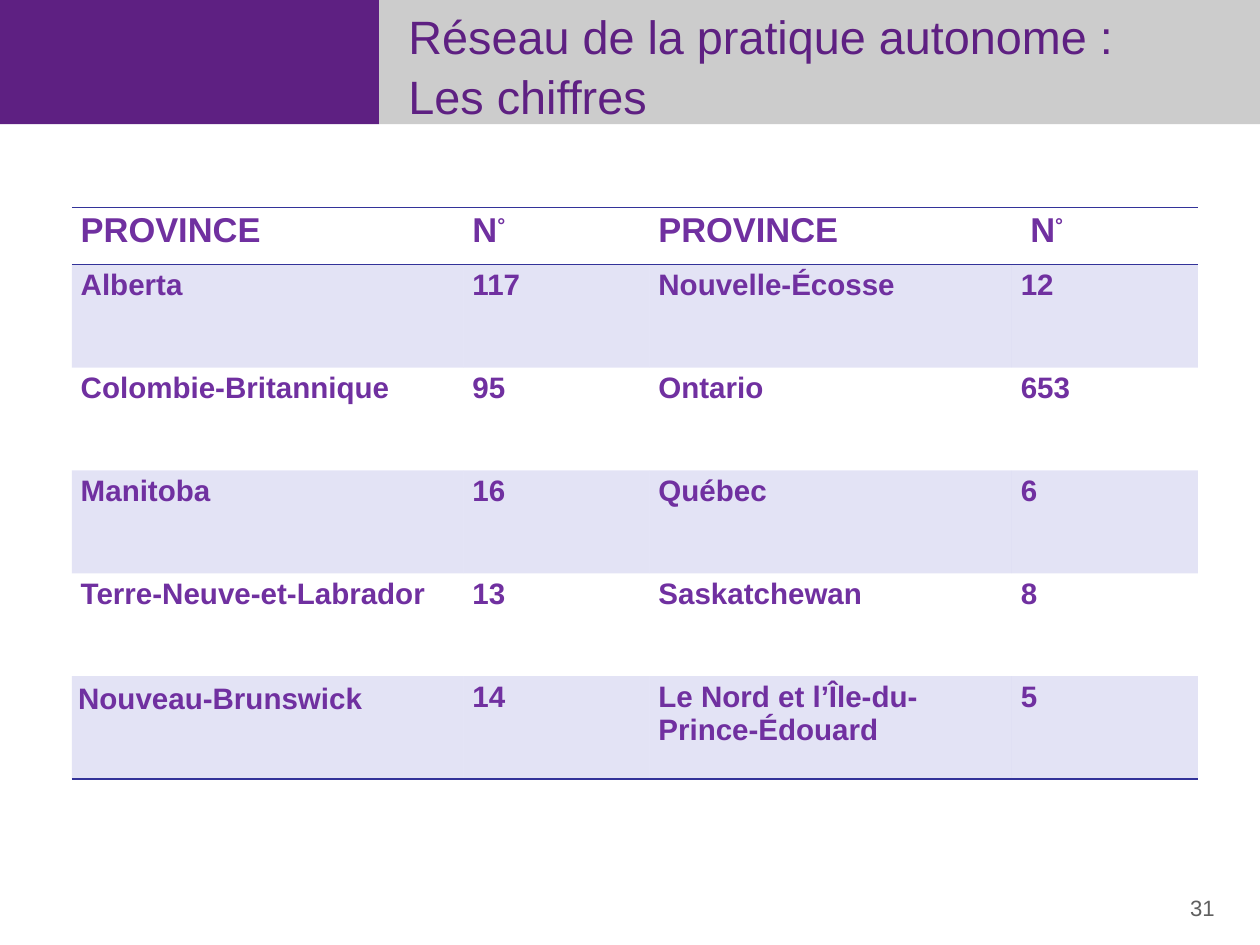
from lxml.etree import SubElement
from pptx import Presentation
from pptx.dml.color import RGBColor
from pptx.enum.shapes import MSO_SHAPE
from pptx.enum.text import MSO_ANCHOR, PP_ALIGN
from pptx.oxml import parse_xml
from pptx.oxml.ns import nsdecls, qn
from pptx.util import Cm, Pt

FONT = "Arial"
PURPLE, GREY = "5E2082", "CCCCCC"
TABLE_TEXT, RULE, BAND = "7030A0", "333399", "7575D1"
NO_STYLE = "{2D5ABB26-0587-4C30-8999-92F81FD0307C}"

COLUMN_WIDTHS = [11.23, 5.33, 10.39, 5.33]
HEADER_HEIGHT, ROW_HEIGHT = 1.65, 2.95
HEADINGS = [["PROVINCE"], ["N", "°"], ["PROVINCE"], [" N", "°"]]
PROVINCES = [
    ["Alberta", "117", "Nouvelle-Écosse", "12"],
    ["Colombie-Britannique", "95", "Ontario", "653"],
    ["Manitoba", "16", "Québec", "6"],
    ["Terre-Neuve-et-Labrador", "13", "Saskatchewan", "8"],
    ["Nouveau-Brunswick", "14", "Le Nord et l’Île-du-Prince-Édouard", "5"],
]


def colour(value):
    return RGBColor.from_string(value)


def add_span(para, text, size, hue, bold=False):
    span = para.add_run()
    span.text = text
    span.font.name = FONT
    span.font.size = Pt(size)
    span.font.bold = bold
    span.font.color.rgb = colour(hue)
    return span


def add_band(page, left, top, width, height, hue):
    band = page.shapes.add_shape(MSO_SHAPE.RECTANGLE, Cm(left), Cm(top), Cm(width), Cm(height))
    band.shadow.inherit = False
    band.fill.solid()
    band.fill.fore_color.rgb = colour(hue)
    band.line.fill.background()


def add_text_box(page, left, top, width, height):
    box = page.shapes.add_textbox(Cm(left), Cm(top), Cm(width), Cm(height))
    box.text_frame.word_wrap = True
    return box.text_frame


def add_title_bar(page, left, top, width, height):
    accent_width = 10.87
    add_band(page, left, top, accent_width, height, PURPLE)
    add_band(page, left + accent_width, top, width - accent_width, height, GREY)
    frame = add_text_box(page, left + accent_width + 0.59, top + 0.74, 22.86, 2.21)
    frame.vertical_anchor = MSO_ANCHOR.MIDDLE
    for index, line in enumerate(["Réseau de la pratique autonome :", "Les chiffres"]):
        para = frame.add_paragraph() if index else frame.paragraphs[0]
        para.line_spacing = 1.06
        add_span(para, line, 38, PURPLE)


def rule_cell(cell, sides):
    """Draw a rule on the given sides, "T" before "B"."""
    properties = cell._tc.get_or_add_tcPr()
    for position, side in enumerate(sides):
        properties.insert(position, parse_xml(
            f'<a:ln{side} {nsdecls("a")} w="12700"><a:solidFill>'
            f'<a:srgbClr val="{RULE}"/></a:solidFill></a:ln{side}>'))


def shade_cell(cell):
    cell.fill.solid()
    cell.fill.fore_color.rgb = colour(BAND)
    tint = cell._tc.tcPr.find(".//" + qn("a:srgbClr"))
    SubElement(tint, qn("a:alpha")).set("val", "20000")


def add_province_table(page, left, top):
    count = len(PROVINCES)
    height = HEADER_HEIGHT + count * ROW_HEIGHT
    frame = page.shapes.add_table(count + 1, len(COLUMN_WIDTHS), Cm(left), Cm(top),
                                  Cm(sum(COLUMN_WIDTHS)), Cm(height))
    table = frame.table
    table._tbl.tblPr.find(qn("a:tableStyleId")).text = NO_STYLE
    for column, width in zip(table.columns, COLUMN_WIDTHS):
        column.width = Cm(width)
    for index, row in enumerate(table.rows):
        row.height = Cm(ROW_HEIGHT if index else HEADER_HEIGHT)

    for index, heading in enumerate(HEADINGS):
        cell = table.cell(0, index)
        cell.fill.background()
        for text in heading:
            span = add_span(cell.text_frame.paragraphs[0], text, 28, TABLE_TEXT, True)
            if text == "°":
                span.font._element.set("baseline", "30000")
        rule_cell(cell, "TB")

    for number, values in enumerate(PROVINCES, start=1):
        for index, text in enumerate(values):
            cell = table.cell(number, index)
            add_span(cell.text_frame.paragraphs[0], text, 24, TABLE_TEXT, True)
            if number % 2:
                shade_cell(cell)
            else:
                cell.fill.background()
            if number == count:
                rule_cell(cell, "B")

    corner = table.cell(count, 0)
    corner.margin_left = corner.margin_right = Cm(0.18)
    corner.margin_top = corner.margin_bottom = Cm(0.18)


def add_page_number(page, left, top, width, height):
    para = add_text_box(page, left, top, width, height).paragraphs[0]
    para.alignment = PP_ALIGN.RIGHT
    add_span(para, "31", 18, "606060")


def main():
    deck = Presentation()
    deck.slide_width, deck.slide_height = Cm(36.12), Cm(27.1)
    page = deck.slides.add_slide(deck.slide_layouts[6])
    add_title_bar(page, 0, 0, 36.12, 3.56)
    add_province_table(page, 2.06, 5.94)
    add_page_number(page, 33.27, 25.53, 1.8, 1.02)
    deck.save("out.pptx")


if __name__ == "__main__":
    main()
